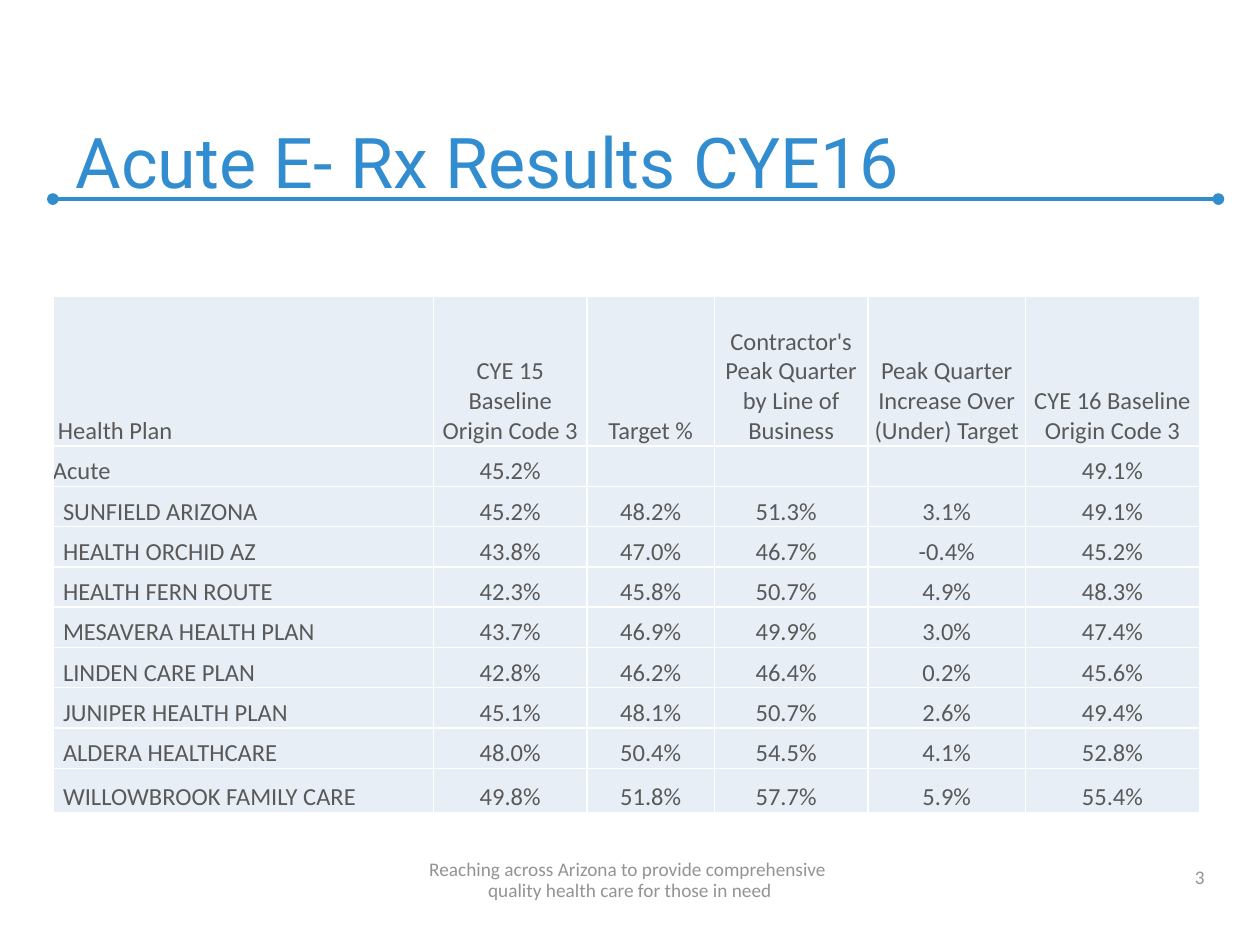
from lxml import etree
from pptx import Presentation
from pptx.dml.color import RGBColor
from pptx.enum.shapes import MSO_CONNECTOR
from pptx.enum.text import MSO_ANCHOR as Anchor, MSO_AUTO_SIZE as AutoSize, PP_ALIGN as Align
from pptx.oxml.ns import qn
from pptx.util import Inches, Pt

TITLE_BLUE = RGBColor(0x31, 0x8D, 0xCF)
RULE_BLUE = RGBColor(0x31, 0x8D, 0xCC)
FOOTER_GRAY = RGBColor(0x93, 0x93, 0x93)
TABLE_TEXT = RGBColor(0x59, 0x59, 0x59)
CELL_FILL = RGBColor(0xE8, 0xEE, 0xF6)
WHITE = RGBColor(0xFF, 0xFF, 0xFF)

HEADERS = [
    "Health Plan",
    "CYE 15 Baseline\vOrigin Code 3",
    "Target %",
    "Contractor's Peak Quarter\vby Line of Business",
    "Peak Quarter Increase Over (Under) Target",
    "CYE 16 Baseline\vOrigin Code 3",
]
RESULTS = [
    ["Acute", "45.2%", "", "", "", "49.1%"],
    ["SUNFIELD ARIZONA", "45.2%", "48.2%", "51.3%", "3.1%", "49.1%"],
    ["HEALTH ORCHID AZ", "43.8%", "47.0%", "46.7%", "-0.4%", "45.2%"],
    ["HEALTH FERN ROUTE", "42.3%", "45.8%", "50.7%", "4.9%", "48.3%"],
    ["MESAVERA HEALTH PLAN", "43.7%", "46.9%", "49.9%", "3.0%", "47.4%"],
    ["LINDEN CARE PLAN", "42.8%", "46.2%", "46.4%", "0.2%", "45.6%"],
    ["JUNIPER HEALTH PLAN", "45.1%", "48.1%", "50.7%", "2.6%", "49.4%"],
    ["ALDERA HEALTHCARE", "48.0%", "50.4%", "54.5%", "4.1%", "52.8%"],
    ["WILLOWBROOK FAMILY CARE", "49.8%", "51.8%", "57.7%", "5.9%", "55.4%"],
]
COLUMN_WIDTHS = [3.02, 1.22, 1.01, 1.22, 1.25, 1.38]
ROW_HEIGHTS = [1.19] + [0.32] * 8 + [0.35]
PEAK_COLUMN = 3
FIRST_PLAN_ROW = 2


class SlideBuilder:
    body_font = "Calibri"
    title_font = "Roboto"

    def __init__(self, slide):
        self.slide = slide

    def style(self, paragraph, size, color, name=None, align=Align.LEFT):
        paragraph.alignment = align
        font = paragraph.font
        font.name, font.size = name or self.body_font, Pt(size)
        font.color.rgb = color

    def title(self, text, left, top, width, height):
        title = self.slide.shapes.title
        title.left, title.top = Inches(left), Inches(top)
        title.width, title.height = Inches(width), Inches(height)
        frame = title.text_frame
        frame.text = text
        frame.word_wrap, frame.auto_size = True, AutoSize.NONE
        frame.vertical_anchor = Anchor.BOTTOM
        self.style(frame.paragraphs[0], 40, TITLE_BLUE, self.title_font)

    def rule(self, left, right, y):
        rule = self.slide.shapes.add_connector(
            MSO_CONNECTOR.STRAIGHT, Inches(left), Inches(y), Inches(right), Inches(y))
        rule.line.color.rgb = RULE_BLUE
        rule.line.width = Pt(2.25)
        line_xml = rule.line._get_or_add_ln()
        for end in ("a:headEnd", "a:tailEnd"):
            etree.SubElement(line_xml, qn(end), type="oval")
        etree.SubElement(rule._element.spPr, qn("a:effectLst"))

    def footer(self, text, left, top, width, height, align, spacing=None):
        box = self.slide.shapes.add_textbox(
            Inches(left), Inches(top), Inches(width), Inches(height))
        frame = box.text_frame
        frame.text = text
        frame.word_wrap = True
        frame.vertical_anchor = Anchor.BOTTOM
        paragraph = frame.paragraphs[0]
        self.style(paragraph, 11, FOOTER_GRAY, align=align)
        if spacing:
            paragraph.line_spacing = Pt(spacing)

    def border(self, cell):
        properties = cell._tc.get_or_add_tcPr()
        for position, side in enumerate(("a:lnL", "a:lnR", "a:lnT", "a:lnB")):
            edge = etree.Element(qn(side), w=str(Pt(1)))
            fill = etree.SubElement(edge, qn("a:solidFill"))
            etree.SubElement(fill, qn("a:srgbClr"), val=str(WHITE))
            properties.insert(position, edge)

    def cell(self, cell, text, align, left=0, right=0):
        cell.text = text
        cell.margin_left, cell.margin_right = Inches(left), Inches(right)
        cell.margin_top = cell.margin_bottom = 0
        cell.vertical_anchor = Anchor.BOTTOM
        cell.fill.solid()
        cell.fill.fore_color.rgb = CELL_FILL
        self.style(cell.text_frame.paragraphs[0], 14, TABLE_TEXT, align=align)
        self.border(cell)

    def table(self, rows, left, top):
        table = self.slide.shapes.add_table(
            len(rows), len(COLUMN_WIDTHS), Inches(left), Inches(top),
            Inches(sum(COLUMN_WIDTHS)), Inches(sum(ROW_HEIGHTS))).table
        table.first_row = table.horz_banding = False
        for column, width in zip(table.columns, COLUMN_WIDTHS):
            column.width = Inches(width)
        for r, (values, height) in enumerate(zip(rows, ROW_HEIGHTS)):
            table.rows[r].height = Inches(height)
            # Plan names are indented below the group name
            name_indent = {0: 0.04, 1: 0}.get(r, 0.08)
            for c, value in enumerate(values):
                is_name = c == 0
                is_peak = c == PEAK_COLUMN and r >= FIRST_PLAN_ROW
                self.cell(table.cell(r, c), value,
                          Align.LEFT if is_name else Align.CENTER,
                          left=name_indent if is_name else 0,
                          right=0.08 if is_peak else 0)


def main():
    deck = Presentation()
    deck.slide_width, deck.slide_height = Inches(10), Inches(7.5)
    builder = SlideBuilder(deck.slides.add_slide(deck.slide_layouts[5]))

    # Title and rule
    builder.rule(0.42, 9.67, 1.58)
    builder.title("Acute E- Rx Results CYE16", 0.5, 0.33, 9.08, 1.33)

    # Page number and motto
    builder.footer("3", 7.33, 6.78, 2.33, 0.32, Align.RIGHT)
    builder.footer("Reaching across Arizona to provide comprehensive \v"
                   "quality health care for those in need",
                   0, 6.78, 10, 0.42, Align.CENTER, spacing=12)

    # Results by health plan
    builder.table([HEADERS] + RESULTS, 0.42, 2.35)

    deck.save("out.pptx")


if __name__ == "__main__":
    main()
